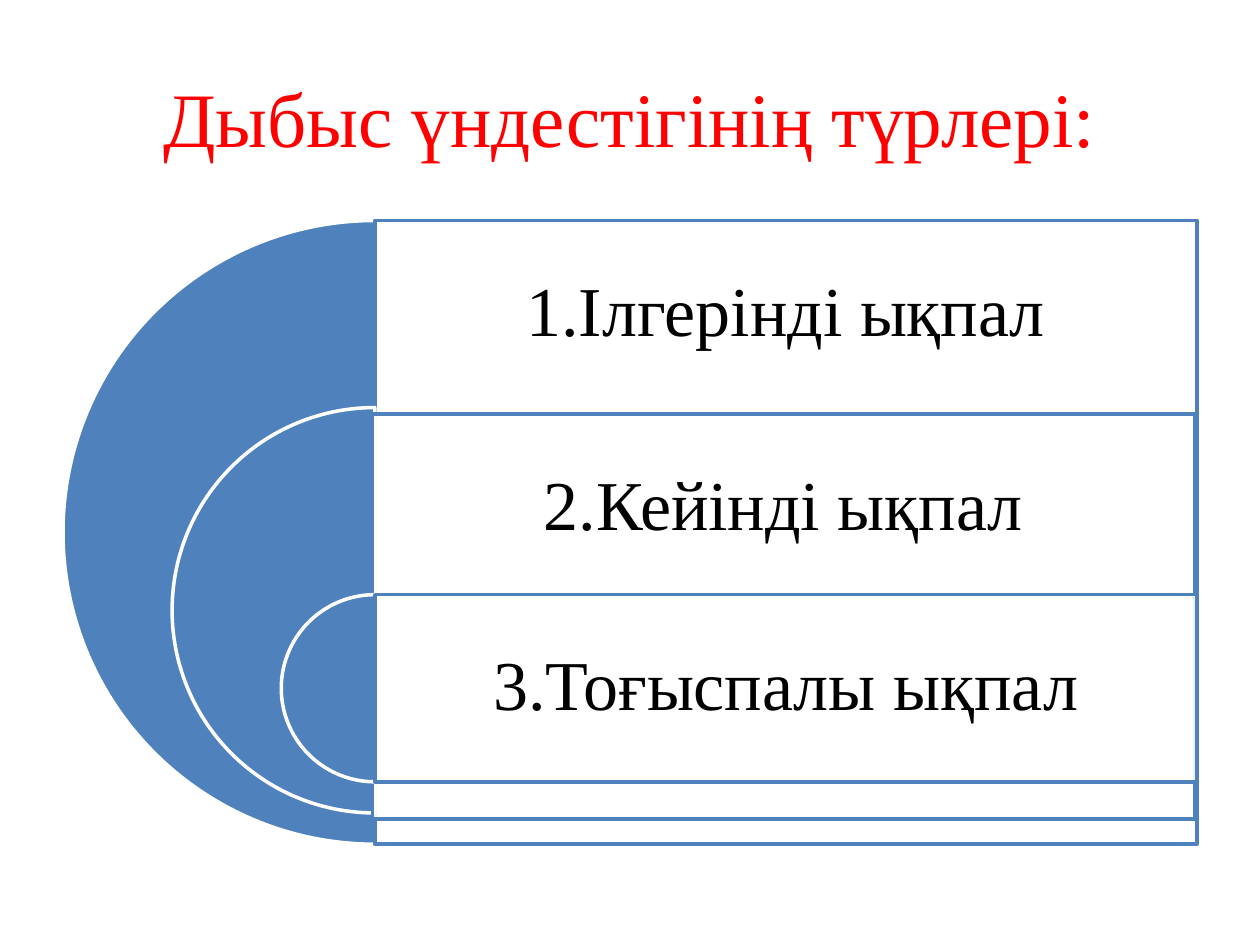
from lxml.etree import SubElement
from pptx import Presentation
from pptx.dml.color import RGBColor
from pptx.enum.shapes import MSO_SHAPE as Shape
from pptx.enum.text import MSO_ANCHOR as Anchor, PP_ALIGN as Align
from pptx.oxml.ns import qn
from pptx.util import Inches, Pt

# Content: label, ring size as a share of the largest, panel offset (x, y)
TITLE = "Дыбыс үндестігінің түрлері:"
LEVELS = [
    ("1.Ілгерінді ықпал", 1.0, (0, 0)),
    ("2.Кейінді ықпал", 0.65, (-0.02, 0.05)),
    ("3.Тоғыспалы ықпал", 0.3, (0, 0)),
]

BLUE = RGBColor(0x4F, 0x81, 0xBD)
WHITE = RGBColor(0xFF, 0xFF, 0xFF)
RED = RGBColor(0xFF, 0x00, 0x00)
BLACK = RGBColor(0x00, 0x00, 0x00)

# Layout in inches
WIDTH, HEIGHT, MARGIN = 10, 7.5, 0.5
TOP, DIAMETER = 1.75, 4.95
ROW = 0.3 * DIAMETER
CENTER = MARGIN + DIAMETER / 2
PANEL_WIDTH = WIDTH - MARGIN - CENTER
INSET = 0.17


def write_text(frame, text, size, color):
    frame.word_wrap = True
    frame.vertical_anchor = Anchor.MIDDLE
    paragraph = frame.paragraphs[0]
    paragraph.text = text
    paragraph.alignment = Align.CENTER
    font = paragraph.runs[0].font
    for name, value in {"name": "Times New Roman", "size": Pt(size)}.items():
        setattr(font, name, value)
    font.color.rgb = color
    return paragraph


def add_filled(shapes, kind, box, fill, line):
    shape = shapes.add_shape(kind, *map(Inches, box))
    shape.shadow.inherit = False
    shape.fill.solid()
    shape.fill.fore_color.rgb = fill
    shape.line.color.rgb = line
    shape.line.width = Pt(2)
    return shape


def add_level(shapes, index, label, share, offset):
    top, size = TOP + index * ROW, share * DIAMETER
    left, panel_top = CENTER + offset[0], top + offset[1]

    # Half disc, drawn from 90 to 270 degrees
    disc = add_filled(shapes, Shape.PIE, (CENTER - size / 2, top, size, size), BLUE, WHITE)
    disc.adjustments[0], disc.adjustments[1] = 54, 162

    # Panel with 90 % opacity
    panel = add_filled(shapes, Shape.RECTANGLE, (left, panel_top, PANEL_WIDTH, size), WHITE, BLUE)
    color = panel.fill._xPr.find(qn("a:solidFill"))[0]
    SubElement(color, qn("a:alpha"), val="90000")

    # Label in the top row of the panel
    box = shapes.add_textbox(*map(Inches, (left, panel_top, PANEL_WIDTH, ROW)))
    for side in ("left", "top", "right", "bottom"):
        setattr(box.text_frame, f"margin_{side}", Inches(INSET))
    write_text(box.text_frame, label, 40, BLACK).line_spacing = 0.9


def main():
    presentation = Presentation()
    presentation.slide_width, presentation.slide_height = Inches(WIDTH), Inches(HEIGHT)
    slide = presentation.slides.add_slide(presentation.slide_layouts[5])

    # Title
    title = slide.shapes.title
    title.left, title.top = Inches(MARGIN), Inches(0.3)
    title.width, title.height = Inches(WIDTH - 2 * MARGIN), Inches(1.25)
    write_text(title.text_frame, TITLE, 44, RED)

    # Nested levels
    diagram = slide.shapes.add_group_shape()
    for index, level in enumerate(LEVELS):
        add_level(diagram.shapes, index, *level)

    presentation.save("out.pptx")


if __name__ == "__main__":
    main()
